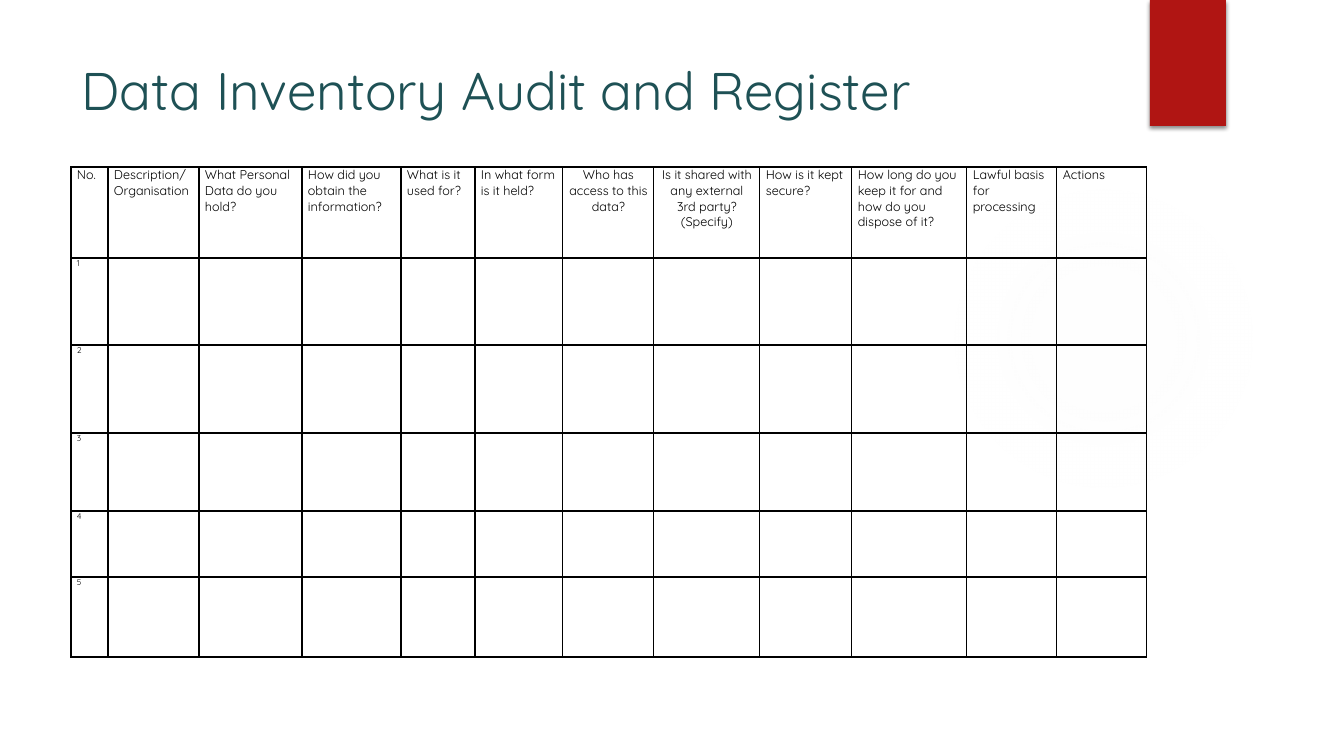
from lxml import etree
from pptx import Presentation
from pptx.dml.color import RGBColor
from pptx.enum.shapes import MSO_SHAPE
from pptx.enum.text import MSO_ANCHOR, PP_ALIGN
from pptx.oxml import parse_xml
from pptx.oxml.ns import nsdecls, qn
from pptx.util import Pt

LEFT, CENTER = PP_ALIGN.LEFT, PP_ALIGN.CENTER
TOP, MIDDLE = MSO_ANCHOR.TOP, MSO_ANCHOR.MIDDLE
RECT, OVAL = MSO_SHAPE.RECTANGLE, MSO_SHAPE.OVAL

# Content
TITLE = "Data Inventory Audit and Register"
COLUMNS = [  # heading, width in px, alignment
    ("No.", 37, LEFT),
    ("Description/Organisation", 91, LEFT),
    ("What Personal Data do you hold?", 103, LEFT),
    ("How did you obtain the information?", 99, LEFT),
    ("What is it used for?", 74, LEFT),
    ("In what form is it held?", 88, LEFT),
    ("Who has access to this data?", 91, CENTER),
    ("Is it shared with any external 3rd party? (Specify)", 106, CENTER),
    ("How is it kept secure?", 92, LEFT),
    ("How long do you keep it for and how do you dispose of it?", 115, LEFT),
    ("Lawful basis for processing", 90, LEFT),
    ("Actions", 90, LEFT),
]
ROW_HEIGHTS = [91, 87, 88, 78, 66, 80]

# Style
FONT = "Quicksand"
TEAL = RGBColor(0x1E, 0x51, 0x55)
RED = RGBColor(0xB0, 0x15, 0x13)
BLACK = RGBColor(0, 0, 0)
GLOW = "F3F3F3"
GLOW_STOPS = [(0, 7), (36, 6), (69, 0)]  # position and opacity in percent
EMU_PER_PX = 914400 / 100.8


def px(n):
    return round(n * EMU_PER_PX)


def write(tf, text, size, color=BLACK, align=LEFT):
    p = tf.paragraphs[0]
    p.alignment = align
    r = p.add_run()
    r.text = text
    r.font.size = Pt(size)
    r.font.name = FONT
    r.font.color.rgb = color


def add_plain_shape(kind, x, y, w, h):
    sp = slide.shapes.add_shape(kind, px(x), px(y), px(w), px(h))
    sp.shadow.inherit = False
    sp.line.fill.background()
    return sp


def add_borders(cell):
    tc_pr = cell._tc.get_or_add_tcPr()
    for i, side in enumerate(("lnL", "lnR", "lnT", "lnB")):
        tc_pr.insert(i, parse_xml(
            f'<a:{side} {nsdecls("a")} w="{Pt(1)}"><a:solidFill>'
            f'<a:srgbClr val="{BLACK}"/></a:solidFill></a:{side}>'))


prs = Presentation()
prs.slide_width, prs.slide_height = px(1344), px(756)
slide = prs.slides.add_slide(prs.slide_layouts[6])

# Faint round glow
glow = add_plain_shape(OVAL, 949, 184, 310, 310)
glow.fill.background()
stops = "".join(
    f'<a:gs pos="{pos * 1000}"><a:srgbClr val="{GLOW}">'
    f'<a:alpha val="{alpha * 1000}"/></a:srgbClr></a:gs>'
    for pos, alpha in GLOW_STOPS)
sp_pr = glow._element.spPr
sp_pr.replace(sp_pr.find(qn("a:noFill")), parse_xml(
    f'<a:gradFill {nsdecls("a")}><a:gsLst>{stops}</a:gsLst><a:path path="circle">'
    '<a:fillToRect l="50000" t="50000" r="50000" b="50000"/></a:path></a:gradFill>'))

# Red tab with a soft shadow
tab = add_plain_shape(RECT, 1150, 0, 76, 126)
tab.fill.solid()
tab.fill.fore_color.rgb = RED
effects = tab._element.spPr.find(qn("a:effectLst"))
shadow = etree.SubElement(effects, qn("a:outerShdw"), blurRad=str(Pt(3)),
                          dist=str(Pt(2)), dir="5400000", rotWithShape="0")
shade = etree.SubElement(shadow, qn("a:srgbClr"), val=str(BLACK))
etree.SubElement(shade, qn("a:alpha"), val="45000")

# Title
title = slide.shapes.add_textbox(px(72), px(50), px(1037), px(79))
tf = title.text_frame
tf.word_wrap = True
tf.vertical_anchor = MIDDLE
write(tf, TITLE, 37.8, TEAL)

# Register table
frame = slide.shapes.add_table(
    len(ROW_HEIGHTS), len(COLUMNS), px(71), px(167),
    px(sum(width for _, width, _ in COLUMNS)), px(sum(ROW_HEIGHTS)))
table = frame.table
table.first_row = table.horz_banding = False
for column, (_, width, _) in zip(table.columns, COLUMNS):
    column.width = px(width)
for row, height in zip(table.rows, ROW_HEIGHTS):
    row.height = px(height)

for cell in table.iter_cells():
    cell.fill.background()
    cell.margin_left = cell.margin_right = px(6)
    cell.margin_top = cell.margin_bottom = 0
    cell.vertical_anchor = TOP
    add_borders(cell)

for c, (heading, _, align) in enumerate(COLUMNS):
    write(table.cell(0, c).text_frame, heading, 9, align=align)
for number in range(1, len(ROW_HEIGHTS)):
    write(table.cell(number, 0).text_frame, str(number), 6)

prs.save("out.pptx")
